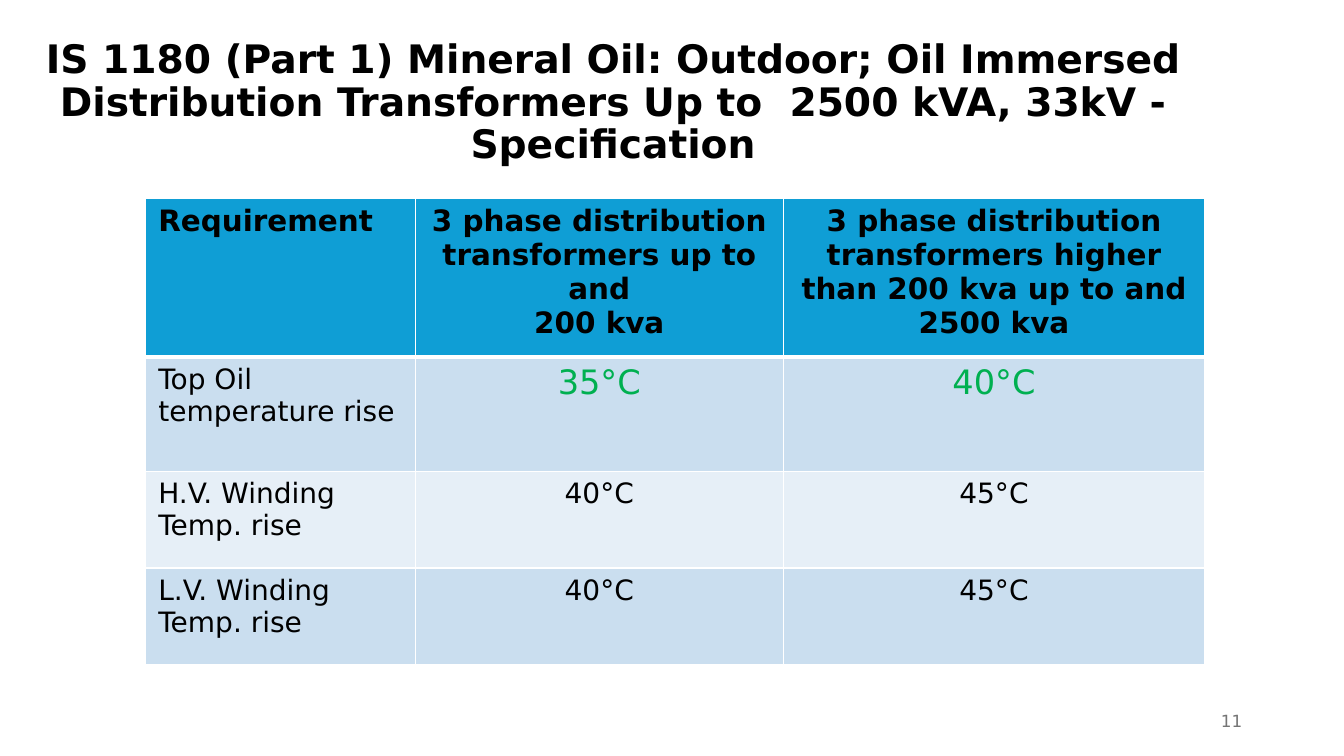
from lxml import etree
from pptx import Presentation
from pptx.dml.color import RGBColor
from pptx.enum.text import MSO_ANCHOR, MSO_AUTO_SIZE, PP_ALIGN
from pptx.oxml.ns import qn
from pptx.util import Inches, Pt

LEFT, CENTER, RIGHT = PP_ALIGN.LEFT, PP_ALIGN.CENTER, PP_ALIGN.RIGHT
MIDDLE = MSO_ANCHOR.MIDDLE
NO_FIT = MSO_AUTO_SIZE.NONE

BLACK = RGBColor(0x00, 0x00, 0x00)
WHITE = RGBColor(0xFF, 0xFF, 0xFF)
GRAY = RGBColor(0x75, 0x75, 0x75)
GREEN = RGBColor(0x00, 0xB0, 0x50)
BLUE = RGBColor(0x0F, 0x9E, 0xD5)
BANDS = (RGBColor(0xCA, 0xDE, 0xEF), RGBColor(0xE6, 0xEF, 0xF7))

TITLE = ("IS 1180 (Part 1) Mineral Oil: Outdoor; Oil Immersed Distribution "
         "Transformers Up to  2500 kVA, 33kV - Specification")
HEAD = ("Requirement",
        "3 phase distribution transformers up to and\n200 kva",
        "3 phase distribution transformers higher than 200 kva up to and 2500 kva")
LIMITS = (("Top Oil temperature rise", "35°C", "40°C"),
          ("H.V. Winding Temp. rise", "40°C", "45°C"),
          ("L.V. Winding Temp. rise", "40°C", "45°C"))
WIDTHS = (20.1, 27.38, 31.36)
HEIGHTS = (21.07, 15.07, 12.8, 12.8)


class Deck:
    """Places elements on a grid of 100 columns by 100 rows."""

    font = "DejaVu Sans"

    def __init__(self):
        self.prs = Presentation()
        self.prs.slide_width = Inches(13.33)
        self.prs.slide_height = Inches(7.5)
        self.slide = self.prs.slides.add_slide(self.prs.slide_layouts[5])

    def col(self, count):
        return round(self.prs.slide_width * count / 100)

    def row(self, count):
        return round(self.prs.slide_height * count / 100)

    def box(self, x, y, w, h):
        return self.col(x), self.row(y), self.col(w), self.row(h)

    def set_text(self, frame, text, size, color=BLACK, bold=False, align=LEFT):
        frame.text = text
        frame.word_wrap = True
        for para in frame.paragraphs:
            para.alignment = align
            for run in para.runs:
                font = run.font
                font.name, font.size, font.bold = self.font, Pt(size), bold
                font.color.rgb = color

    def title(self, text, *place):
        shape = self.slide.shapes.title
        shape.left, shape.top, shape.width, shape.height = self.box(*place)
        frame = shape.text_frame
        self.set_text(frame, text, 28, bold=True, align=CENTER)
        frame.auto_size = NO_FIT
        frame.vertical_anchor = MIDDLE
        frame.paragraphs[0].line_spacing = 0.9

    def label(self, text, *place):
        frame = self.slide.shapes.add_textbox(*self.box(*place)).text_frame
        self.set_text(frame, text, 12, GRAY, align=RIGHT)
        frame.vertical_anchor = MIDDLE

    def edge(self, cell, top, bottom):
        """Draw white cell borders; top and bottom are widths in points."""
        props = cell._tc.get_or_add_tcPr()
        for side, width in (("L", 1), ("R", 1), ("T", top), ("B", bottom)):
            line = etree.SubElement(props, qn(f"a:ln{side}"), w=str(Pt(width)))
            fill = etree.SubElement(line, qn("a:solidFill"))
            etree.SubElement(fill, qn("a:srgbClr"), val=str(WHITE))

    def cell(self, cell, text, fill, **style):
        cell.margin_left = cell.margin_right = Inches(0.13)
        cell.margin_top = cell.margin_bottom = Inches(0.06)
        self.set_text(cell.text_frame, text, **style)
        cell.fill.solid()
        cell.fill.fore_color.rgb = fill

    def table(self, rows, x, y):
        place = self.box(x, y, sum(WIDTHS), sum(HEIGHTS))
        grid = self.slide.shapes.add_table(len(rows), len(WIDTHS), *place).table
        for column, width in zip(grid.columns, WIDTHS):
            column.width = self.col(width)
        for r, (texts, height) in enumerate(zip(rows, HEIGHTS)):
            grid.rows[r].height = self.row(height)
            for c, text in enumerate(texts):
                style = {"size": 20, "align": CENTER if c else LEFT}
                fill = BANDS[(r - 1) % 2]
                if r == 0:
                    style.update(size=21, bold=True)
                    fill = BLUE
                elif r == 1 and c:
                    style.update(size=24, color=GREEN)
                cell = grid.cell(r, c)
                self.edge(cell, 3 if r == 1 else 1, 3 if r == 0 else 1)
                self.cell(cell, text, fill, **style)


def main():
    deck = Deck()
    deck.title(TITLE, 1.65, 2.67, 87.92, 22)
    deck.table((HEAD, *LIMITS), 10.8, 26.2)
    deck.label("11", 70.67, 92.67, 22.5, 5.33)
    deck.prs.save("out.pptx")


if __name__ == "__main__":
    main()
